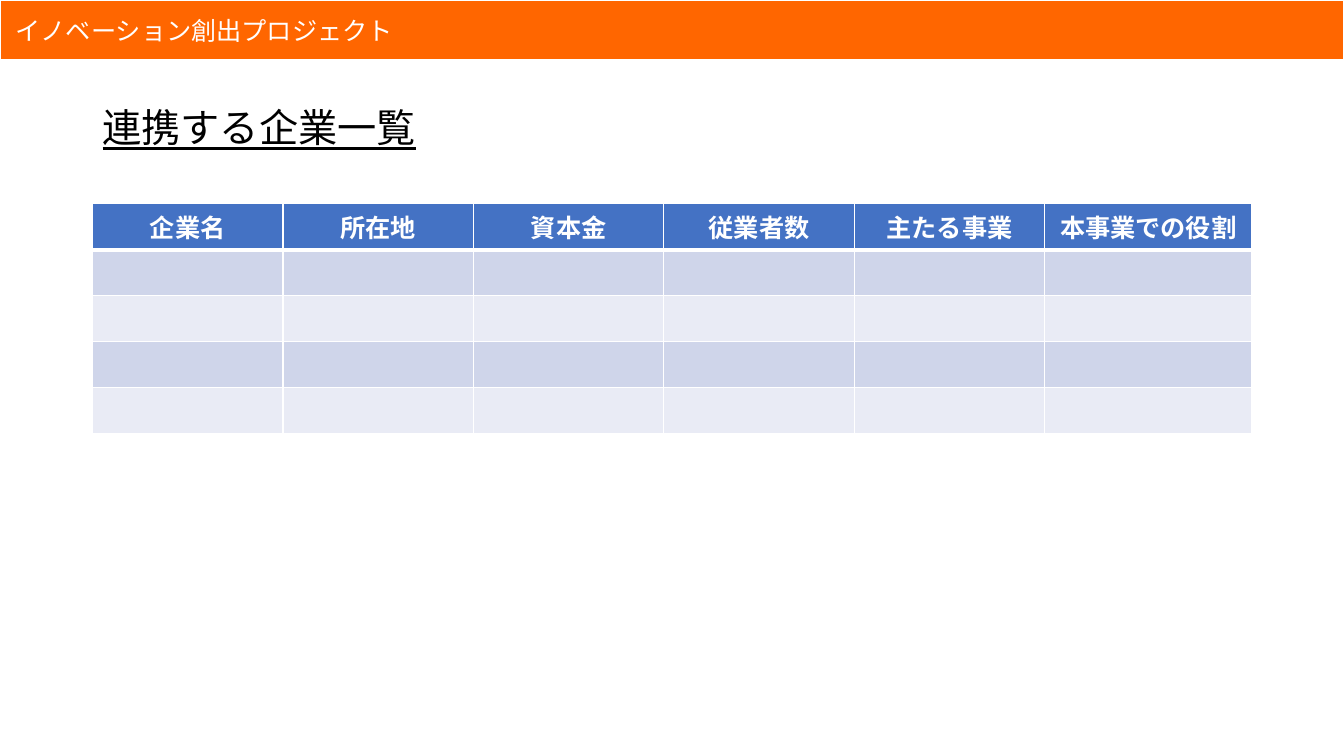
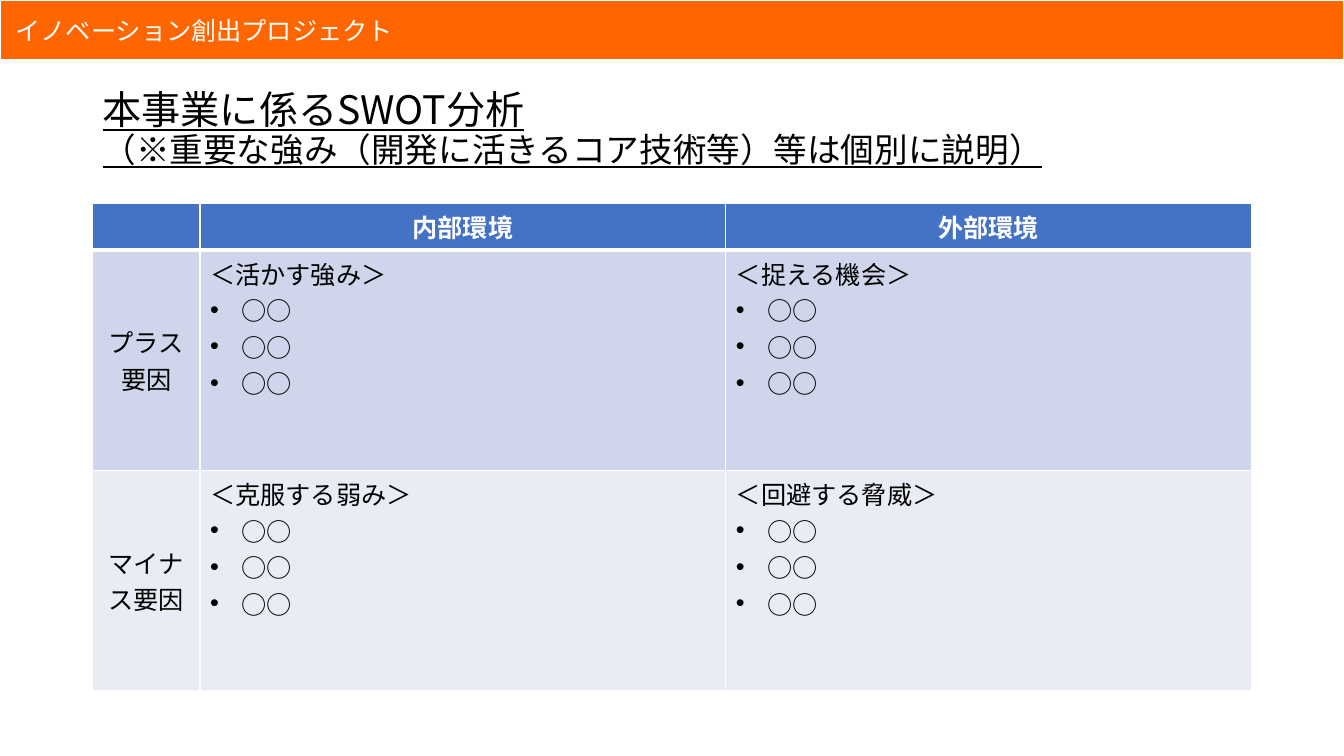
from copy import deepcopy
from dataclasses import dataclass

from lxml.etree import SubElement as Sub
from pptx import Presentation as Deck
from pptx.dml.color import RGBColor as Rgb
from pptx.enum.shapes import MSO_SHAPE as Kind
from pptx.enum.text import MSO_ANCHOR as Anchor, MSO_AUTO_SIZE as Fit, PP_ALIGN as Align
from pptx.oxml.ns import qn
from pptx.util import Cm, Pt


@dataclass(frozen=True)
class Theme:
    font: str = "Noto Sans CJK JP"
    band: str = "FF6600"
    head: str = "4472C4"
    odd: str = "CFD5EA"
    even: str = "E9EBF5"
    white: str = "FFFFFF"
    ink: str = "000000"
    title: int = 28
    note: int = 24
    body: int = 18
    thin: int = 1
    thick: int = 3


@dataclass(frozen=True)
class Box:
    left: float
    top: float
    width: float
    height: float

    def place(self):
        return [Cm(v) for v in (self.left, self.top, self.width, self.height)]


LOOK = Theme()
PAGE = Box(0, 0, 33.87, 19.05)
BAND = Box(0, 0, PAGE.width, 1.52)
TITLE = Box(2.33, 1.88, 29.21, 2.79)
LIST = Box(2.33, 5.12, 29.21, 5.8)
SWOT = Box(2.33, 5.12, 29.21, 12.28)
HEAD = 1.16


def add_run(para, text, size=LOOK.body, color=LOOK.ink, bold=False, line=False):
    run = para.add_run()
    run.text = text
    font = run.font
    font.name, font.size, font.bold, font.underline = LOOK.font, Pt(size), bold, line
    font.color.rgb = Rgb.from_string(color)
    Sub(run._r.get_or_add_rPr(), qn("a:ea"), typeface=LOOK.font)
    return run


def add_band(slide, layout, box):
    band = slide.shapes.add_shape(Kind.RECTANGLE, *box.place())
    band.shadow.inherit = False
    band.fill.solid()
    band.fill.fore_color.rgb = Rgb.from_string(LOOK.band)
    band.line.color.rgb = Rgb.from_string(LOOK.white)
    band.line.width = Pt(1.5)
    frame = band.text_frame
    frame.vertical_anchor = Anchor.MIDDLE
    para = frame.paragraphs[0]
    para.alignment = Align.LEFT
    add_run(para, " イノベーション創出プロジェクト", color=LOOK.white)
    layout.shapes.element.insert(2, band.element)


def add_title(slide, box, text, note=None):
    title = slide.shapes.title
    title.left, title.top, title.width, title.height = box.place()
    frame = title.text_frame
    frame.word_wrap = True
    frame.auto_size = Fit.NONE
    frame.vertical_anchor = Anchor.MIDDLE
    para = frame.paragraphs[0]
    para.alignment = Align.LEFT
    para.line_spacing = 0.9
    run = add_run(para, text, LOOK.title, line=True)
    if note:
        para.add_line_break()
        para._p[-1].append(deepcopy(run._r.rPr))
        add_run(para, note, LOOK.note, line=True)


def add_edges(cell, row):
    props = cell._tc.get_or_add_tcPr()
    wide = {"T": row == 1, "B": row == 0}
    for side in "LRTB":
        size = LOOK.thick if wide.get(side) else LOOK.thin
        edge = Sub(props, qn(f"a:ln{side}"), w=str(Pt(size)))
        Sub(Sub(edge, qn("a:solidFill")), qn("a:srgbClr"), val=LOOK.white)


def add_grid(slide, box, heads, count, widths):
    shape = slide.shapes.add_table(count + 1, len(heads), *box.place())
    grid = shape.table
    for col, width in zip(grid.columns, widths):
        col.width = Cm(width)
    step = (box.height - HEAD) / count
    for idx, row in enumerate(grid.rows):
        row.height = Cm(step if idx else HEAD)
        shade = (LOOK.odd if idx % 2 else LOOK.even) if idx else LOOK.head
        for cell in row.cells:
            add_edges(cell, idx)
            cell.fill.solid()
            cell.fill.fore_color.rgb = Rgb.from_string(shade)
    for cell, text in zip(grid.rows[0].cells, heads):
        if text:
            para = cell.text_frame.paragraphs[0]
            para.alignment = Align.CENTER
            add_run(para, text, color=LOOK.white, bold=True)
    return grid


def add_points(cell, head, points):
    frame = cell.text_frame
    add_run(frame.paragraphs[0], head)
    for text in points:
        para = frame.add_paragraph()
        props = para._p.get_or_add_pPr()
        props.set("marL", str(Cm(0.79)))
        props.set("indent", str(-Cm(0.79)))
        Sub(props, qn("a:buFont"), typeface="Arial")
        Sub(props, qn("a:buChar"), char="•")
        add_run(para, text)


def fill_list(slide, box):
    add_title(slide, TITLE, "連携する企業一覧")
    heads = ["企業名", "所在地", "資本金", "従業者数", "主たる事業", "本事業での役割"]
    last = 5.21
    width = (box.width - last) / 5
    add_grid(slide, box, heads, 4, [width] * 5 + [last])


def fill_swot(slide, box):
    add_title(slide, TITLE, "本事業に係るSWOT分析",
              "（※重要な強み（開発に活きるコア技術等）等は個別に説明）")
    side = 2.71
    width = (box.width - side) / 2
    rows = [
        ("プラス要因", "＜活かす強み＞", "＜捉える機会＞"),
        ("マイナス要因", "＜克服する弱み＞", "＜回避する脅威＞"),
    ]
    grid = add_grid(slide, box, ["", "内部環境", "外部環境"], len(rows), [side, width, width])
    for idx, (name, *heads) in enumerate(rows, 1):
        cell = grid.cell(idx, 0)
        cell.vertical_anchor = Anchor.MIDDLE
        para = cell.text_frame.paragraphs[0]
        para.alignment = Align.CENTER
        add_run(para, name)
        for col, head in enumerate(heads, 1):
            add_points(grid.cell(idx, col), head, ["○○"] * 3)


def main():
    deck = Deck()
    deck.slide_width, deck.slide_height = Cm(PAGE.width), Cm(PAGE.height)
    layout = deck.slide_layouts[5]
    first, second = (deck.slides.add_slide(layout) for _ in range(2))
    add_band(first, layout, BAND)
    fill_list(first, LIST)
    fill_swot(second, SWOT)
    deck.save("out.pptx")


if __name__ == "__main__":
    main()
